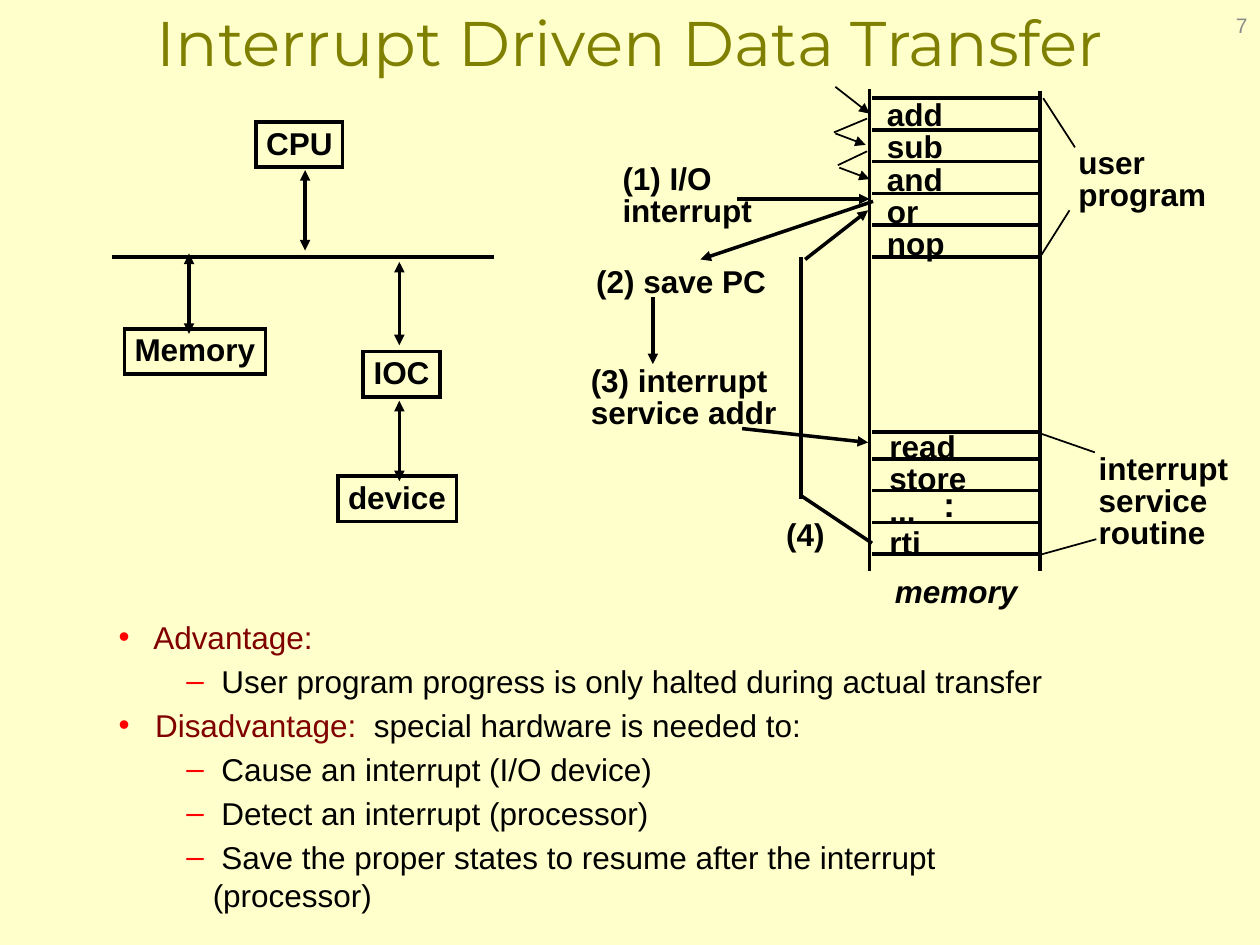
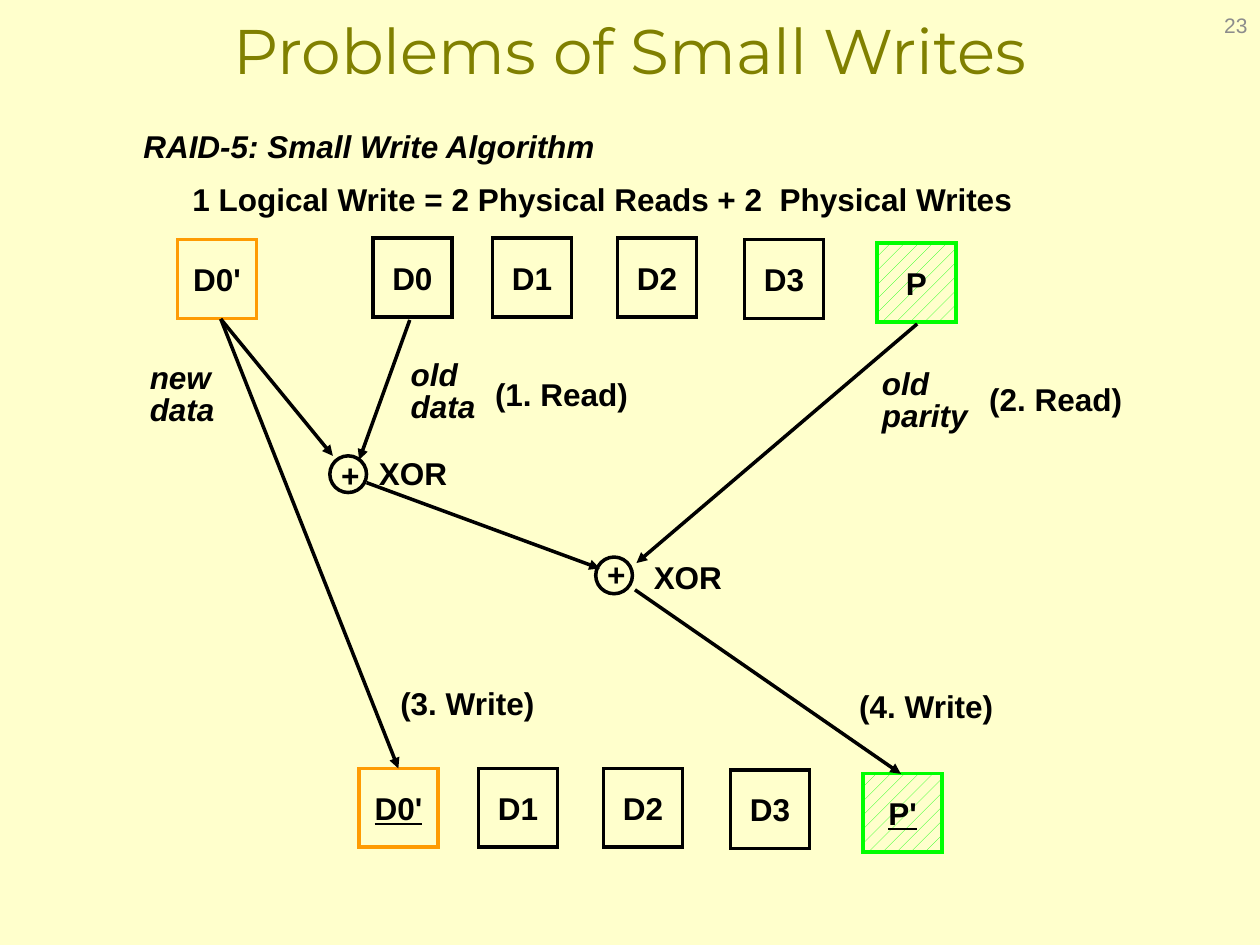
"""Build two lecture slides: interrupt driven transfer and RAID-5 small writes."""
from lxml.etree import SubElement
from pptx import Presentation
from pptx.dml.color import RGBColor
from pptx.enum.dml import MSO_PATTERN
from pptx.enum.shapes import MSO_CONNECTOR, MSO_SHAPE
from pptx.enum.text import MSO_ANCHOR as ANCHOR, MSO_AUTO_SIZE as AUTO, PP_ALIGN as ALIGN
from pptx.oxml.ns import qn
from pptx.util import Cm, Pt

CREAM, OLIVE, GREY, BLACK = "FFFFCC", "808000", "8C8C8C", "000000"
MAROON, RED, ORANGE, GREEN = "800000", "FF0000", "FE9B03", "00FF00"
TIGHT, ROOMY = (0.18, 0.08), (0.25, 0.13)
END, BOTH = ("tailEnd",), ("headEnd", "tailEnd")
SLACK = 0.4

ADVANTAGES = [
    (0, [(" Advantage:", MAROON)]),
    (1, [(" User program progress is only halted during actual transfer", BLACK)]),
    (0, [(" Disadvantage:", MAROON), ("  special hardware is needed to:", BLACK)]),
    (1, [(" Cause an interrupt (I/O device)", BLACK)]),
    (1, [(" Detect an interrupt (processor)", BLACK)]),
    (1, [(" Save the proper states to resume after the interrupt (processor)", BLACK)]),
]
BULLETS = [("•", 0.56, -0.56), ("–", 1.9, -0.53)]

MEMORY_X = (17.58, 20.93)
MEMORY_ROWS = [1.98 + 0.64 * i for i in range(6)] + [8.71] + [9.25 + 0.64 * i for i in range(4)]
MEMORY_SIDES = [(17.53, 1.8, 17.53, 11.51), (20.96, 1.83, 20.96, 11.51)]
INTERRUPT_LABELS = [
    (["add", "sub", "and", "or", "nop"], 17.7, 1.96, 1.52, 3.38),
    (["read", "store", "...", "rti"], 17.75, 8.64, 1.9, 2.74),
    (["user", "program"], 21.56, 2.92, 2.92, 1.45),
    (["(1) I/O", "interrupt"], 12.37, 3.25, 2.97, 1.45),
    (["(2) save PC"], 11.84, 5.31, 3.78, 0.79),
    (["(3) interrupt", "service addr"], 11.73, 7.32, 4.09, 1.45),
    (["interrupt", "service", "routine"], 21.97, 9.09, 2.97, 2.08),
    (["(4)"], 15.67, 10.41, 1.12, 0.79),
]
BRACES = [
    (21.03, 1.98, 21.67, 2.97), (20.98, 5.16, 21.56, 4.24),
    (20.98, 8.74, 22.07, 9.12), (20.98, 11.18, 22.1, 10.87),
    (17.48, 2.39, 16.81, 2.67), (17.48, 3.05, 16.89, 3.33),
]
FETCHES = [
    (16.84, 1.75, 17.53, 2.29), (16.84, 2.69, 17.45, 2.92), (16.92, 3.38, 17.53, 3.61),
]
INTERRUPT_STEPS = [
    (14.86, 4.01, 17.53, 4.01), (17.6, 4.06, 14.12, 5.23), (13.16, 5.99, 13.16, 7.34),
    (14.96, 8.64, 17.5, 8.92), (16.23, 5.23, 17.5, 4.24),
]
RETURN_PATH = [(17.58, 10.95, 16.13, 9.98), (16.15, 10.06, 16.15, 5.18)]
BUS = (2.26, 5.18, 9.96, 5.18)
UNITS = [
    ("CPU", 5.16, 2.46, 1.75), ("IOC", 7.32, 7.09, 1.55),
    ("device", 6.81, 9.6, 2.39), ("Memory", 2.51, 6.63, 2.84),
]
UNIT_LINKS = [
    (6.15, 3.43, 6.15, 5.05), (8.05, 5.28, 8.05, 6.96),
    (8.05, 8.08, 8.05, 9.7), (3.81, 5.11, 3.81, 6.73),
]

DISK = 1.59
STRIPE = [
    (7.52, 4.8, "D0", "D0'"), (9.93, 4.8, "D1", "D1"), (12.45, 4.8, "D2", "D2"),
    (15.01, 4.83, "D3", "D3"), (17.68, 4.9, "P", "P'"),
]
WRITTEN_SHIFT = (-0.28, 10.69)
DISK_COLOURS = {"D0'": ORANGE, "P": GREEN, "P'": GREEN}
XOR_GATES = [(6.65, 9.19, 9.19), (12.01, 11.23, 11.18)]
WRITE_FLOW = [
    (4.45, 6.43, 6.71, 9.19), (8.26, 6.45, 7.24, 9.27), (7.39, 9.73, 12.09, 11.46),
    (18.49, 6.53, 12.83, 11.35), (12.8, 11.89, 18.16, 15.6), (4.45, 6.43, 8.03, 15.49),
]
WRITE_NOTES = [
    (["new", "data"], 2.77, 7.21, 1.8, 1.55), (["old", "data"], 8.03, 7.14, 1.8, 1.55),
    (["old", "parity"], 17.53, 7.32, 2.24, 1.55),
    (["RAID-5: Small Write Algorithm"], 2.64, 2.54, 9.65, 0.89),
]
WRITE_LABELS = [
    (["XOR"], 12.93, 11.23, 1.88, 0.89), (["XOR"], 7.39, 9.14, 1.88, 0.89),
    (["(1. Read)"], 9.73, 7.54, 3.18, 0.89), (["(2. Read)"], 19.69, 7.65, 3.18, 0.89),
    (["(3. Write)"], 7.82, 13.77, 3.23, 0.89), (["(4. Write)"], 17.07, 13.84, 3.23, 0.89),
    (["1 Logical Write = 2 Physical Reads + 2  Physical Writes"], 3.63, 3.61, 17.07, 0.89),
]


def rgb(colour):
    return RGBColor.from_string(colour)


def write(sp, paragraphs, size=18, font="Arial", colour=BLACK, bold=True, italic=False,
          underline=False, align=ALIGN.LEFT, spacing=0.85, before=0, inset=TIGHT,
          anchor=ANCHOR.TOP, wrap=True, grow=True):
    tf = sp.text_frame
    tf.word_wrap = wrap
    tf.auto_size = AUTO.SHAPE_TO_FIT_TEXT if grow else AUTO.NONE
    tf.vertical_anchor = anchor
    tf.margin_left = tf.margin_right = Cm(inset[0])
    tf.margin_top = tf.margin_bottom = Cm(inset[1])
    for i, runs in enumerate(paragraphs):
        p = tf.paragraphs[0] if i == 0 else tf.add_paragraph()
        p.alignment, p.line_spacing, p.space_before = align, spacing, Pt(before)
        for text, ink in [(runs, colour)] if isinstance(runs, str) else runs:
            r = p.add_run()
            r.text = text
            f = r.font
            f.name, f.size, f.bold, f.italic, f.underline = font, Pt(size), bold, italic, underline
            f.color.rgb = rgb(ink)
    return tf


def text_box(slide, paragraphs, x, y, w, h, **style):
    return write(slide.shapes.add_textbox(Cm(x), Cm(y), Cm(w), Cm(h)), paragraphs, **style)


def label(slide, paragraphs, x, y, w, h, **style):
    return text_box(slide, paragraphs, x, y, w + SLACK, h, **style)


def box(slide, x, y, w, h, kind=MSO_SHAPE.RECTANGLE, line=BLACK, fill=None):
    sp = slide.shapes.add_shape(kind, Cm(x), Cm(y), Cm(w), Cm(h))
    sp.shadow.inherit = False
    sp.line.color.rgb, sp.line.width = rgb(line), Pt(2)
    SubElement(sp.element.spPr.find(qn("a:ln")), qn("a:miter"), lim="800000")
    if fill:
        sp.fill.solid()
        sp.fill.fore_color.rgb = rgb(fill)
    else:
        sp.fill.background()
    return sp


def lines(slide, segments, width=2, heads=()):
    for segment in segments:
        cx = slide.shapes.add_connector(MSO_CONNECTOR.STRAIGHT, *map(Cm, segment))
        cx.line.color.rgb, cx.line.width = rgb(BLACK), Pt(width)
        spPr = cx.element.spPr
        for head in heads:
            SubElement(spPr.find(qn("a:ln")), qn("a:" + head), type="triangle")
        SubElement(spPr, qn("a:effectLst"))


def bullet(p, level):
    char, margin, indent = BULLETS[level]
    p.level = level
    pPr = p._p.get_or_add_pPr()
    pPr.set("marL", str(Cm(margin)))
    pPr.set("indent", str(Cm(indent)))
    SubElement(SubElement(pPr, qn("a:buClr")), qn("a:srgbClr"), val=RED)
    SubElement(pPr, qn("a:buFont"), typeface="Arial")
    SubElement(pPr, qn("a:buChar"), char=char)


def new_slide(prs, title, number, top):
    slide = prs.slides.add_slide(prs.slide_layouts[6])
    slide.background.fill.solid()
    slide.background.fill.fore_color.rgb = rgb(CREAM)
    shared = dict(bold=False, spacing=1, inset=ROOMY, anchor=ANCHOR.MIDDLE, grow=False)
    text_box(slide, [title], 0, top, 25.4, 1.6, size=36, font="Montserrat", colour=OLIVE,
             align=ALIGN.CENTER, **shared)
    text_box(slide, [number], 19.48, 0, 5.92, 1.02, size=12, colour=GREY, align=ALIGN.RIGHT,
             **shared)
    return slide


def interrupt_slide(prs):
    slide = new_slide(prs, "Interrupt Driven Data Transfer", "7", 0.03)
    tf = text_box(slide, [runs for _, runs in ADVANTAGES], 2.21, 12.37, 19.71, 6.25,
                  bold=False, spacing=1, before=3.6, grow=False)
    for p, (level, _) in zip(tf.paragraphs, ADVANTAGES):
        bullet(p, level)
    left, right = MEMORY_X
    lines(slide, MEMORY_SIDES + [(left, y, right, y) for y in MEMORY_ROWS])
    for item in INTERRUPT_LABELS:
        label(slide, *item)
    label(slide, ["memory"], 17.86, 11.56, 2.82, 0.79, italic=True)
    label(slide, [":"], 18.77, 9.6, 0.74, 1.09, size=20, spacing=1, inset=ROOMY)
    lines(slide, BRACES, width=1)
    lines(slide, FETCHES, width=1, heads=END)
    lines(slide, INTERRUPT_STEPS, heads=END)
    lines(slide, RETURN_PATH + [BUS])
    for name, x, y, w in UNITS:
        write(box(slide, x, y, w, 0.91), [name], align=ALIGN.CENTER, spacing=0.92,
              anchor=ANCHOR.MIDDLE, wrap=False)
    lines(slide, UNIT_LINKS, heads=BOTH)


def disk(slide, name, x, y, underline=False):
    colour = DISK_COLOURS.get(name, BLACK)
    sp = box(slide, x, y, DISK, DISK, line=colour)
    if colour == GREEN:
        sp.fill.patterned()
        sp.fill.pattern = MSO_PATTERN.PERCENT_10
        sp.fill.fore_color.rgb, sp.fill.back_color.rgb = rgb(GREEN), rgb(CREAM)
    write(sp, [name], underline=underline, align=ALIGN.CENTER, spacing=1, inset=ROOMY,
          anchor=ANCHOR.MIDDLE, wrap=False, grow=False)


def small_writes_slide(prs):
    slide = new_slide(prs, "Problems of Small Writes", "23", 0.2)
    dx, dy = WRITTEN_SHIFT
    disk(slide, "D0'", 3.58, 4.83)
    for x, y, old, new in STRIPE:
        disk(slide, old, x, y)
        disk(slide, new, x + dx, y + dy, underline=new != old)
    for x, y, plus_y in XOR_GATES:
        box(slide, x, y, 0.74, 0.74, kind=MSO_SHAPE.OVAL, fill=CREAM)
        label(slide, ["+"], x - 0.02, plus_y, 0.86, 0.89, inset=ROOMY)
    lines(slide, WRITE_FLOW, heads=END)
    for items, italic in ((WRITE_NOTES, True), (WRITE_LABELS, False)):
        for item in items:
            label(slide, *item, italic=italic, inset=ROOMY)


def main():
    prs = Presentation()
    prs.slide_width, prs.slide_height = Cm(25.4), Cm(19.05)
    interrupt_slide(prs)
    small_writes_slide(prs)
    prs.save("out.pptx")


if __name__ == "__main__":
    main()
